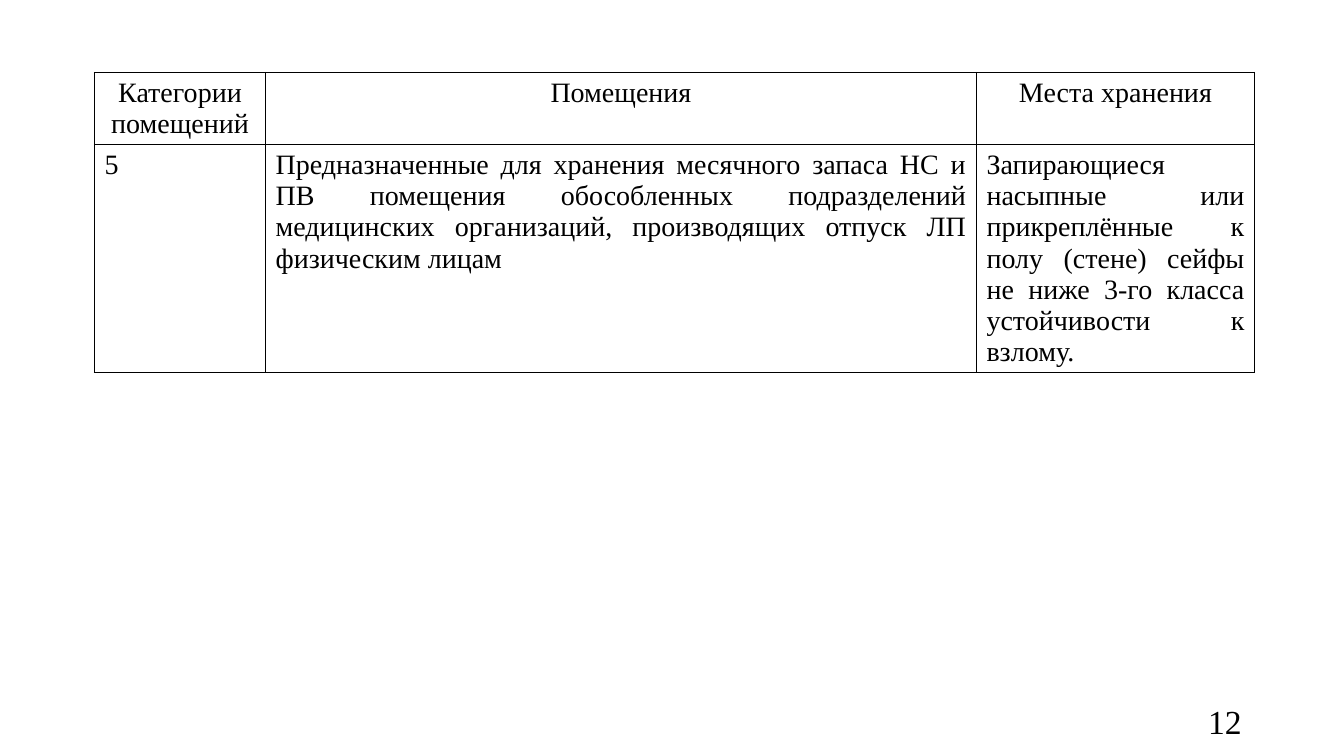
"""Build the slide with the storage requirements for category 5 rooms."""
from lxml.etree import SubElement
from pptx import Presentation
from pptx.dml.color import RGBColor
from pptx.enum.text import MSO_ANCHOR as Anchor, PP_ALIGN as Align
from pptx.oxml.ns import qn
from pptx.util import Pt

HEADERS = ["Категории помещений", "Помещения", "Места хранения"]
CATEGORY = [
    "5",
    "Предназначенные для хранения месячного запаса НС и ПВ помещения "
    "обособленных подразделений медицинских организаций, производящих "
    "отпуск ЛП физическим лицам",
    "Запирающиеся насыпные или прикреплённые к полу (стене) сейфы "
    "не ниже 3-го класса устойчивости к взлому.",
]


def color(value):
    return RGBColor.from_string(value)


class SlideBuilder:
    font_name = "Times New Roman"
    ink = "000000"
    paper = "FFFFFF"

    def __init__(self, slide):
        self.slide = slide
        slide.background.fill.solid()
        slide.background.fill.fore_color.rgb = color(self.paper)

    def set_text(self, text_frame, text, size, alignment):
        text_frame.text = text
        paragraph = text_frame.paragraphs[0]
        paragraph.alignment = alignment
        for run in paragraph.runs:
            run.font.name = self.font_name
            run.font.size = Pt(size)
            run.font.color.rgb = color(self.ink)

    def border(self, cell, width):
        properties = cell._tc.get_or_add_tcPr()
        for side in ("a:lnL", "a:lnR", "a:lnT", "a:lnB"):
            line = SubElement(properties, qn(side), w=str(Pt(width)))
            fill = SubElement(line, qn("a:solidFill"))
            SubElement(fill, qn("a:srgbClr"), val=self.ink)

    def table(self, left, top, widths, row_height, rows, size):
        frame = self.slide.shapes.add_table(
            len(rows), len(widths), Pt(left), Pt(top),
            Pt(sum(widths)), Pt(row_height * len(rows)))
        table = frame.table
        table.first_row = False
        table.horz_banding = False
        for column, width in zip(table.columns, widths):
            column.width = Pt(width)
        for row_index, texts in enumerate(rows):
            alignment = Align.JUSTIFY if row_index else Align.CENTER
            for column_index, text in enumerate(texts):
                cell = table.cell(row_index, column_index)
                self.set_text(cell.text_frame, text, size, alignment)
                self.border(cell, 1)
                cell.fill.background()

    def text(self, left, top, width, height, text, size, alignment):
        box = self.slide.shapes.add_textbox(Pt(left), Pt(top), Pt(width), Pt(height))
        box.text_frame.word_wrap = True
        box.text_frame.vertical_anchor = Anchor.MIDDLE
        self.set_text(box.text_frame, text, size, alignment)


def main():
    presentation = Presentation()
    presentation.slide_width = Pt(960)
    presentation.slide_height = Pt(540)
    builder = SlideBuilder(presentation.slides.add_slide(presentation.slide_layouts[6]))
    builder.table(67.5, 51.8, [122.2, 507.8, 198.7], 36.7, [HEADERS, CATEGORY], 20)
    builder.text(678, 500.5, 216, 28.75, "12", 24, Align.RIGHT)
    presentation.save("out.pptx")


if __name__ == "__main__":
    main()
